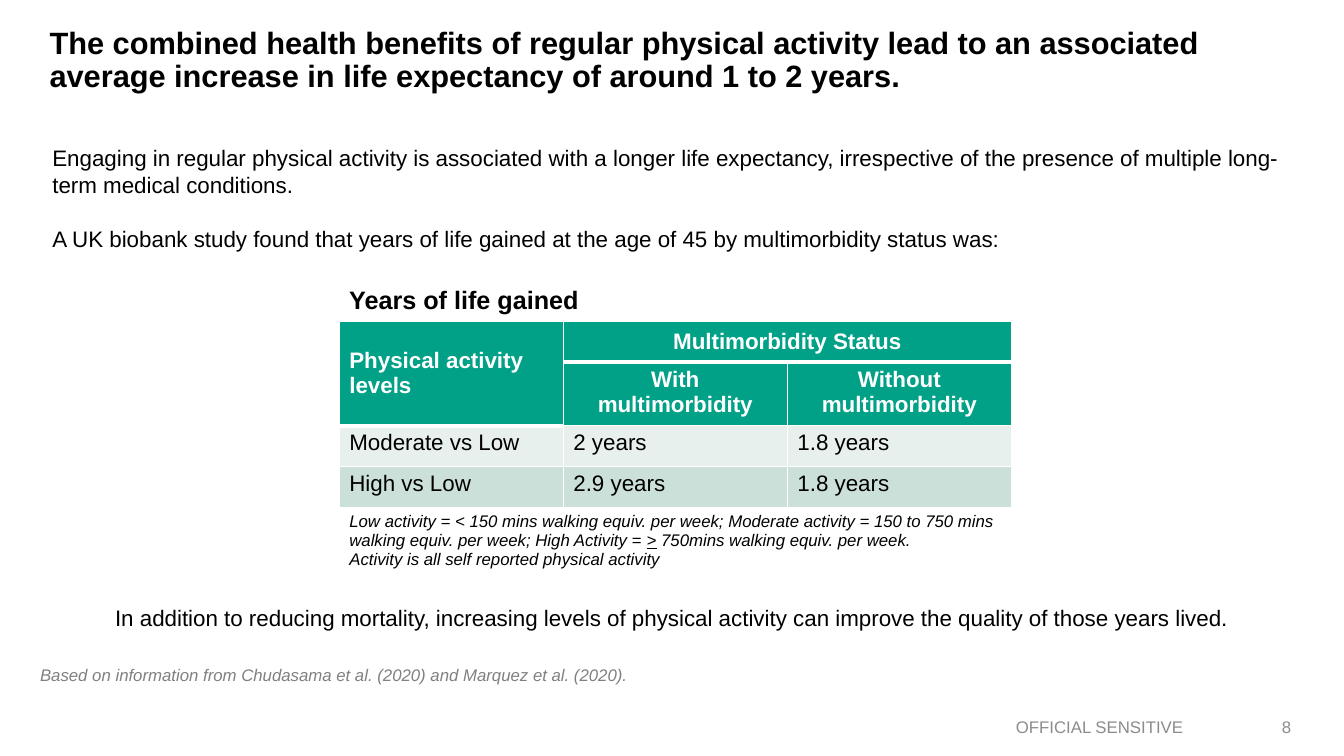
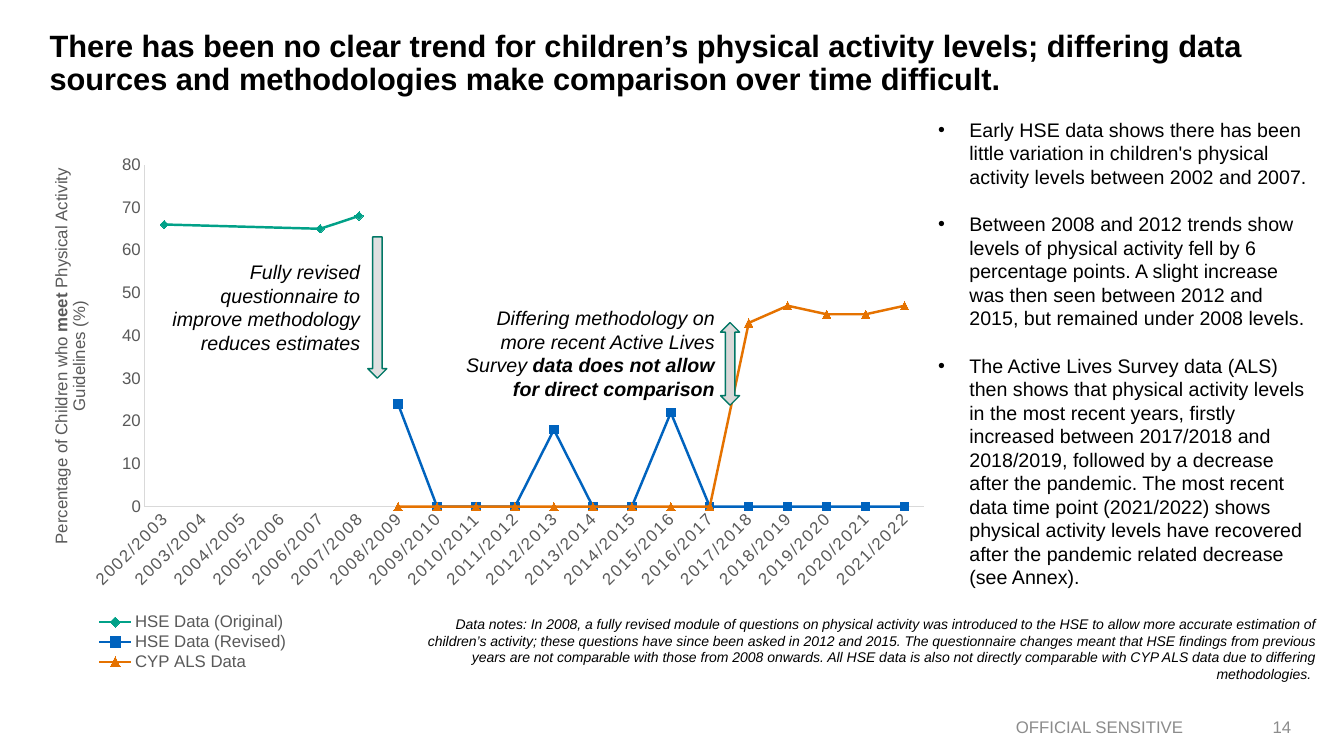
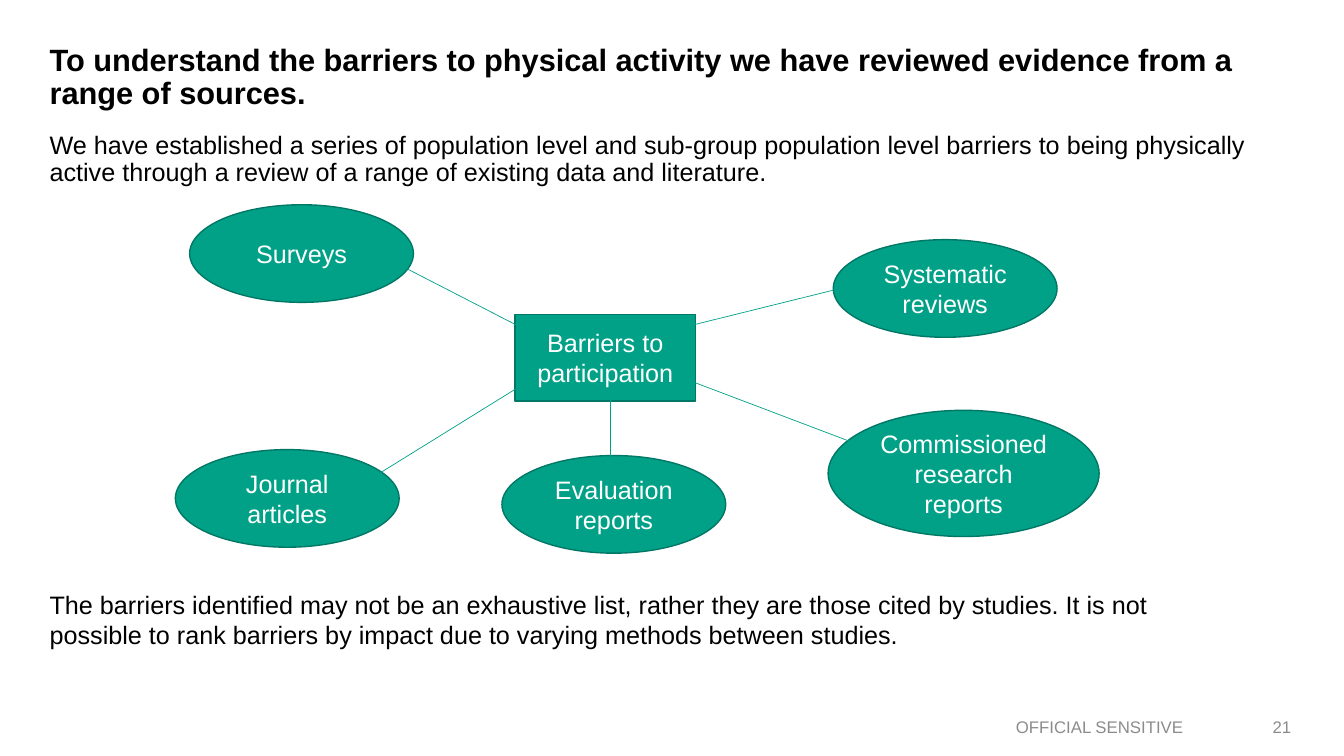
from dataclasses import dataclass

from pptx import Presentation
from pptx import util as u
from pptx.chart.data import CategoryChartData
from pptx.dml.color import RGBColor
from pptx.enum import chart as ch, shapes, text
from pptx.oxml import parse_xml
from pptx.oxml.ns import nsdecls, qn

LEFT, CENTER, RIGHT = text.PP_ALIGN.LEFT, text.PP_ALIGN.CENTER, text.PP_ALIGN.RIGHT
TOP, MIDDLE, BOTTOM = text.MSO_ANCHOR.TOP, text.MSO_ANCHOR.MIDDLE, text.MSO_ANCHOR.BOTTOM


@dataclass(frozen=True)
class Theme:
    """Colours, type sizes and font shared by the slides."""
    font: str = "Arial"
    ink: str = "000000"
    white: str = "FFFFFF"
    green: str = "01A188"
    dark_green: str = "017765"
    blue: str = "0063BE"
    orange: str = "E57200"
    band_light: str = "E7F0ED"
    band_dark: str = "CCE0DA"
    axis_text: str = "595959"
    axis_line: str = "D9D9D9"
    arrow: str = "E0E0E1"
    footer: str = "8C8C8C"
    source: str = "808080"
    title: int = 22
    large: int = 18
    body: int = 16
    medium: int = 14
    small: int = 12
    note: int = 10


T = Theme()


def rgb(value):
    """Turn a hex string into a colour."""
    return RGBColor.from_string(value)


def style_font(font, size, color, flags=""):
    """Set a font; flags hold b, i and u for bold, italic and underline."""
    font.name, font.size, font.color.rgb = T.font, u.Pt(size), rgb(color)
    font.bold, font.italic = "b" in flags, "i" in flags
    if "u" in flags:
        font.underline = True


def write(tf, paras, size, color=T.ink, flags="", align=LEFT, gap=0, spacing=None, bullet=False):
    """Write paragraphs, each a string or a list of (text, extra flags) runs."""
    for n, para in enumerate(paras):
        p = tf.add_paragraph() if n else tf.paragraphs[0]
        if bullet:
            pPr = p._p.get_or_add_pPr()
            pPr.set("marL", str(u.Cm(0.79)))
            pPr.set("indent", str(-u.Cm(0.79)))
            pPr.append(parse_xml(f'<a:buFont {nsdecls("a")} typeface="{T.font}"/>'))
            pPr.append(parse_xml(f'<a:buChar {nsdecls("a")} char="•"/>'))
        p.alignment = align
        if spacing:
            p.line_spacing = spacing
        if gap and n < len(paras) - 1:
            p.space_after = u.Pt(gap)
        for words, extra in [(para, "")] if isinstance(para, str) else para:
            r = p.add_run()
            r.text = words
            style_font(r.font, size, color, flags + extra)


def add_text(s, box, paras, size, anchor=TOP, **style):
    """Place a wrapping text box."""
    tf = s.shapes.add_textbox(*map(u.Cm, box)).text_frame
    tf.word_wrap, tf.vertical_anchor = True, anchor
    write(tf, paras, size, **style)


def add_shape(s, kind, box, fill, label=None):
    """Place an outlined shape with an optional white label."""
    sp = s.shapes.add_shape(kind, *map(u.Cm, box))
    sp.shadow.inherit = False
    sp.fill.solid()
    sp.fill.fore_color.rgb = rgb(fill)
    sp.line.color.rgb, sp.line.width = rgb(T.dark_green), u.Pt(1)
    if label:
        sp.text_frame.word_wrap = True
        sp.text_frame.vertical_anchor = MIDDLE
        write(sp.text_frame, [label], T.large, T.white, align=CENTER)


def add_line(s, start, end):
    """Draw a thin green link."""
    c = s.shapes.add_connector(shapes.MSO_CONNECTOR.STRAIGHT, *map(u.Cm, start + end))
    c.line.color.rgb, c.line.width = rgb(T.green), u.Pt(0.5)
    c._element.spPr.append(parse_xml(f'<a:effectLst {nsdecls("a")}/>'))


def new_slide(prs, title, number, title_top):
    """Add a blank slide with its title and footer."""
    s = prs.slides.add_slide(prs.slide_layouts[6])
    add_text(s, (1, title_top, 31.8, 2.34), [title], T.title, flags="b", spacing=0.9)
    for left, width, words in ((12.34, 17.73, "OFFICIAL SENSITIVE"), (30.68, 2.11, str(number))):
        add_text(s, (left, 17.67, width, 1.02), [words], T.small, BOTTOM, color=T.footer, align=RIGHT)
    return s


def set_borders(cell, bottom):
    """Give a cell white borders, with its own bottom weight in points."""
    tcPr = cell._tc.get_or_add_tcPr()
    for n, (side, width) in enumerate((("L", 1), ("R", 1), ("T", 1), ("B", bottom))):
        tcPr.insert(n, parse_xml(
            f'<a:ln{side} {nsdecls("a")} w="{u.Pt(width)}"><a:solidFill>'
            f'<a:srgbClr val="{T.white}"/></a:solidFill></a:ln{side}>'))


def add_gains_table(s, left, top):
    """Place the table of years of life gained."""
    heights = (1.03, 1.6, 1.03, 1.03, 1.74)
    fills = (T.green, T.green, T.band_light, T.band_dark, None)
    rows = (("Physical activity levels", "Multimorbidity Status", ""),
            ("", "With multimorbidity", "Without multimorbidity"),
            ("Moderate vs Low", "2 years", "1.8 years"),
            ("High vs Low", "2.9 years", "1.8 years"))
    tb = s.shapes.add_table(5, 3, *map(u.Cm, (left, top, 16.94, sum(heights)))).table
    tb.first_row = tb.horz_banding = False
    for row, height, fill in zip(tb.rows, heights, fills):
        row.height = u.Cm(height)
        for cell in row.cells:
            if fill:
                cell.fill.solid()
                cell.fill.fore_color.rgb = rgb(fill)
            else:
                cell.fill.background()
    for i in range(5):
        for j in range(3):
            set_borders(tb.cell(i, j), 3 if i == 0 or (i, j) == (1, 0) else 1)
    for first, last in (((0, 0), (1, 0)), ((0, 1), (0, 2)), ((4, 0), (4, 2))):
        tb.cell(*first).merge(tb.cell(*last))
    for i, row in enumerate(rows):
        for j, words in enumerate(row):
            if not words:
                continue
            cell, head = tb.cell(i, j), i < 2
            cell.vertical_anchor = MIDDLE if i == 0 else TOP
            write(cell.text_frame, [words], T.body, T.white if head else T.ink,
                  "b" if head else "", CENTER if head and j else LEFT)
    write(tb.cell(4, 0).text_frame, [
        [("Low activity = < 150 mins walking equiv. per week; Moderate activity = 150 to 750 mins "
          "walking equiv. per week; High Activity = ", ""),
         (">", "u"), (" 750mins walking equiv. per week.", "")],
        "Activity is all self reported physical activity"], T.small, flags="i")


def set_layout(parent, index, box, chart_box, inner=False):
    """Fix the place of a chart part, given in cm from the corner of the chart."""
    for old in parent.findall(qn("c:layout")):
        parent.remove(old)
    target = '<c:layoutTarget val="inner"/>' if inner else ""
    sizes = "".join(f'<c:{k} val="{v / whole}"/>' for k, v, whole in zip("xywh", box, chart_box[2:] * 2))
    parent.insert(index, parse_xml(
        f'<c:layout {nsdecls("c")}><c:manualLayout>{target}<c:xMode val="edge"/>'
        f'<c:yMode val="edge"/>{sizes}</c:manualLayout></c:layout>'))


def mark_unavailable(series, start, count):
    """Store the blank points of a series from start onward as #N/A."""
    cache = series._element.find(qn("c:val")).find(".//" + qn("c:numCache"))
    points = {int(pt.get("idx")): pt for pt in cache.findall(qn("c:pt"))}
    for idx in range(start, count):
        cache.append(points[idx] if idx in points else parse_xml(
            f'<c:pt {nsdecls("c")} idx="{idx}"><c:v>#N/A</c:v></c:pt>'))


def style_axis(axis):
    """Give an axis its grey line and labels without ticks or gridlines."""
    axis.has_major_gridlines = False
    axis.major_tick_mark = axis.minor_tick_mark = ch.XL_TICK_MARK.NONE
    axis.format.line.color.rgb, axis.format.line.width = rgb(T.axis_line), u.Pt(0.75)
    style_font(axis.tick_labels.font, T.small, T.axis_text)


def add_trend_chart(s, box):
    """Place the line chart of children meeting the guidelines."""
    years = [f"{y}/{y + 1}" for y in range(2002, 2022)]
    marks = ch.XL_MARKER_STYLE
    lines = (("HSE Data (Original)", {2002: 66, 2006: 65, 2007: 68}, T.green, marks.DIAMOND),
             ("HSE Data (Revised)", {2008: 24, 2012: 18, 2015: 22}, T.blue, marks.SQUARE),
             ("CYP ALS Data", {2017: 43, 2018: 47, 2019: 45, 2020: 45, 2021: 47},
              T.orange, marks.TRIANGLE))
    data = CategoryChartData(number_format="0")
    data.categories = years
    for name, values, _, _ in lines:
        data.add_series(name, [values.get(y) for y in range(2002, 2022)])
    chart = s.shapes.add_chart(ch.XL_CHART_TYPE.LINE_MARKERS, *map(u.Cm, box), data).chart
    style_font(chart.font, T.note, T.ink)
    chart.has_title = False
    plot = chart.plots[0]
    plot.vary_by_categories = False
    for series, (_, _, color, mark) in zip(plot.series, lines):
        series.smooth = False
        series.format.line.color.rgb, series.format.line.width = rgb(color), u.Pt(1.75)
        series.marker.style, series.marker.size = mark, 6
        series.marker.format.fill.solid()
        series.marker.format.fill.fore_color.rgb = rgb(color)
        series.marker.format.line.color.rgb = rgb(color)
    for series in list(plot.series)[1:]:
        mark_unavailable(series, years.index("2008/2009"), len(years))
    for blanks in chart.element.iter(qn("c:dispBlanksAs")):
        blanks.set("val", "span")

    cat, val = chart.category_axis, chart.value_axis
    for axis in (cat, val):
        style_axis(axis)
    labels = cat._element.find(qn("c:txPr"))
    labels.find(qn("a:bodyPr")).set("rot", "-2700000")
    next(labels.iter(qn("a:defRPr"))).set("spc", "120")
    val.minimum_scale, val.maximum_scale, val.major_unit = 0, 80, 10
    val.tick_labels.number_format, val.tick_labels.number_format_is_linked = "0", False
    tf = val.axis_title.text_frame
    write(tf, [[("Percentage of Children who ", ""), ("meet", "b"),
                (" Physical Activity Guidelines (%)", "")]], T.small, T.axis_text, align=CENTER)
    tf._txBody.find(qn("a:bodyPr")).set("rot", "-5400000")
    tf._txBody.find(qn("a:bodyPr")).set("vert", "horz")

    chart.has_legend = True
    chart.legend.position = ch.XL_LEGEND_POSITION.BOTTOM
    chart.legend.include_in_layout = False
    style_font(chart.legend.font, T.small, T.axis_text)
    plot_area = next(chart.element.iter(qn("c:plotArea")))
    set_layout(plot_area, 0, (2.91, 0.49, 19.64, 8.62), box, inner=True)
    set_layout(val.axis_title._element, 1, (0.46, 0.5), box)
    set_layout(chart.legend._element, 1, (1.48, 11.74, 5.28, 1.56), box)


def life_expectancy_slide(prs):
    """Build the slide on life expectancy."""
    s = new_slide(prs, "The combined health benefits of regular physical activity lead to an associated "
                  "average increase in life expectancy of around 1 to 2 years.", 8, 0.58)
    add_text(s, (1.07, 3.51, 31.72, 3), [
        "Engaging in regular physical activity is associated with a longer life expectancy, "
        "irrespective of the presence of multiple long-term medical conditions.",
        "A UK biobank study found that years of life gained at the age of 45 by multimorbidity "
        "status was:"], T.body, gap=19.5)
    add_text(s, (0.76, 16.62, 32.18, 0.76),
             ["Based on information from Chudasama et al. (2020) and Marquez et al. (2020)."],
             T.small, color=T.source, flags="i")
    add_gains_table(s, 8.55, 8.09)
    add_text(s, (8.55, 7.04, 11.28, 1.04), ["Years of life gained"], T.large, flags="b")
    add_text(s, (1.07, 15.11, 31.72, 0.94),
             ["In addition to reducing mortality, increasing levels of physical activity can improve "
              "the quality of those years lived."], T.body, align=CENTER)


def children_trend_slide(prs):
    """Build the slide on children's activity levels."""
    s = new_slide(prs, "There has been no clear trend for children’s physical activity levels; differing "
                  "data sources and methodologies make comparison over time difficult.", 14, 0.65)
    add_text(s, (23.39, 2.84, 9.98, 12.22), [
        "Early HSE data shows there has been little variation in children's physical activity "
        "levels between 2002 and 2007.",
        "Between 2008 and 2012 trends show levels of physical activity fell by 6 percentage points. "
        "A slight increase was then seen between 2012 and 2015, but remained under 2008 levels.",
        "The Active Lives Survey data (ALS) then shows that physical activity levels in the most "
        "recent years, firstly increased between 2017/2018 and 2018/2019, followed by a decrease "
        "after the pandemic. The most recent data time point (2021/2022) shows physical activity "
        "levels have recovered after the pandemic related decrease (see Annex)."],
        T.medium, gap=17, bullet=True)
    add_text(s, (10.45, 15.38, 22.94, 1.96), [
        "Data notes: In 2008, a fully revised module of questions on physical activity was introduced "
        "to the HSE to allow more accurate estimation of children’s activity; these questions have "
        "since been asked in 2012 and 2015. The questionnaire changes meant that HSE findings from "
        "previous years are not comparable with those from 2008 onwards. All HSE data is also not "
        "directly comparable with CYP ALS data due to differing methodologies. "],
        T.note, flags="i", align=RIGHT)
    add_trend_chart(s, (0.74, 3.66, 22.94, 13.69))
    add_shape(s, shapes.MSO_SHAPE.DOWN_ARROW, (9.27, 5.97, 0.48, 3.56), T.arrow)
    add_shape(s, shapes.MSO_SHAPE.UP_DOWN_ARROW, (18.16, 8.13, 0.48, 2.08), T.axis_line)
    add_text(s, (3.77, 6.43, 5.56, 2.64),
             ["Fully revised questionnaire to improve methodology reduces estimates"],
             T.medium, flags="i", align=RIGHT)
    add_text(s, (11.46, 7.59, 6.81, 2.64),
             [[("Differing methodology on more recent Active Lives Survey ", ""),
               ("data does not allow for direct comparison", "b")]],
             T.medium, flags="i", align=RIGHT)


def barriers_slide(prs):
    """Build the slide on sources of evidence."""
    s = new_slide(prs, "To understand the barriers to physical activity we have reviewed evidence from "
                  "a range of sources.", 21, 1)
    add_text(s, (1, 3.22, 31.19, 2.08),
             ["We have established a series of population level and sub-group population level barriers "
              "to being physically active through a review of a range of existing data and literature."],
             T.large, spacing=0.9)
    add_shape(s, shapes.MSO_SHAPE.RECTANGLE, (12.98, 7.92, 4.55, 2.19), T.green,
              "Barriers to participation")
    size = (5.64, 2.46)
    sources = (("Systematic reviews", (21, 6.04), size, (21.21, 7.26), (17.42, 8.2)),
               ("Commissioned research reports", (20.87, 10.34), (6.83, 3.18), (17.35, 9.58), (21.62, 11.2)),
               ("Surveys", (4.78, 5.16), size, (9.98, 6.63), (13.03, 8.2)),
               ("Journal articles", (4.42, 11.33), size, (9.3, 12.09), (13.03, 9.78)),
               ("Evaluation reports", (12.65, 11.48), size, (15.39, 9.63), (15.39, 11.48)))
    for label, corner, extent, start, end in sources:
        add_shape(s, shapes.MSO_SHAPE.OVAL, corner + extent, T.green, label)
        add_line(s, start, end)
    add_text(s, (1, 14.72, 30.23, 1.8),
             ["The barriers identified may not be an exhaustive list, rather they are those cited by "
              "studies. It is not possible to rank barriers by impact due to varying methods between "
              "studies."], T.large)


def main():
    """Build and save the presentation."""
    prs = Presentation()
    prs.slide_width, prs.slide_height = u.Cm(33.87), u.Cm(19.05)
    for build in (life_expectancy_slide, children_trend_slide, barriers_slide):
        build(prs)
    prs.save("out.pptx")


if __name__ == "__main__":
    main()
